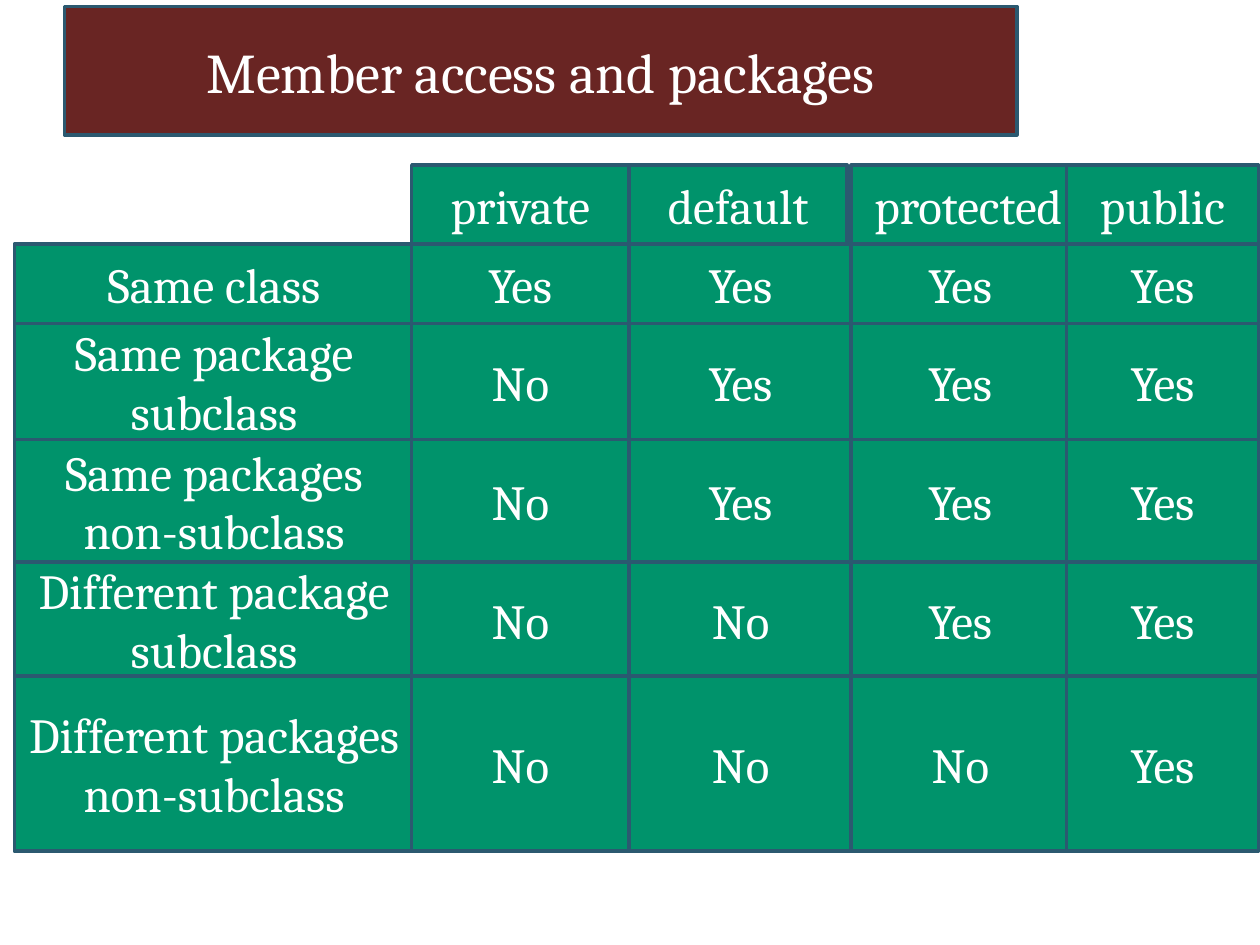
from lxml import etree
from pptx import Presentation
from pptx.dml.color import RGBColor
from pptx.enum.shapes import MSO_SHAPE as SHAPE
from pptx.enum.text import MSO_ANCHOR as ANCHOR, PP_ALIGN as ALIGN
from pptx.oxml.ns import qn
from pptx.util import Cm, Pt

COLORS = {"cell": "00936B", "title": "692523", "line": "2B5970", "text": "FFFFFF"}


def style(sp, text, fill, size):
    sp.fill.solid()
    sp.fill.fore_color.rgb = RGBColor.from_string(COLORS[fill])
    sp.line.color.rgb = RGBColor.from_string(COLORS["line"])
    sp.line.width = Pt(2)
    tf = sp.text_frame
    tf.text = text
    tf.word_wrap = True
    tf.vertical_anchor = ANCHOR.MIDDLE
    p = tf.paragraphs[0]
    p.alignment = ALIGN.CENTER
    p.font.name = "Cambria"
    p.font.size = Pt(size)
    p.font.color.rgb = RGBColor.from_string(COLORS["text"])


prs = Presentation()
prs.slide_width, prs.slide_height = Cm(25.4), Cm(19.05)
s = prs.slides.add_slide(prs.slide_layouts[5])

# Title in a rounded box
title = s.shapes.title
title.left, title.top, title.width, title.height = Cm(1.3), Cm(0.13), Cm(19.2), Cm(2.59)
geom = etree.SubElement(title._element.spPr, qn("a:prstGeom"), prst="roundRect")
etree.SubElement(geom, qn("a:avLst"))
style(title, "Member access and packages", "title", 32)

# Access grid: row tops and heights, the first row holding the headers
rows = [(3.33, 1.6), (4.92, 1.6), (6.52, 2.34), (8.86, 2.48), (11.33, 2.32), (13.63, 3.53)]

# Columns: left, width, header width, texts from top to bottom
columns = [
    (0.29, 8.05, 0, ["", "Same class", "Same package subclass", "Same packages non-subclass",
                     "Different package subclass", "Different packages non-subclass"]),
    (8.3, 4.38, 4.38, ["private", "Yes", "No", "No", "No", "No"]),
    (12.68, 4.5, 4.4, ["default", "Yes", "Yes", "Yes", "No", "No"]),
    (17.16, 4.4, 4.72, ["protected", "Yes", "Yes", "Yes", "Yes", "No"]),
    (21.5, 3.87, 3.87, ["public", "Yes", "Yes", "Yes", "Yes", "Yes"]),
]
for left, width, header_width, texts in columns:
    for i, ((top, height), text) in enumerate(zip(rows, texts)):
        if not text:
            continue
        w = width if i else header_width
        sp = s.shapes.add_shape(SHAPE.RECTANGLE, Cm(left), Cm(top), Cm(w), Cm(height))
        sp.shadow.inherit = False
        style(sp, text, "cell", 28)

prs.save("out.pptx")
